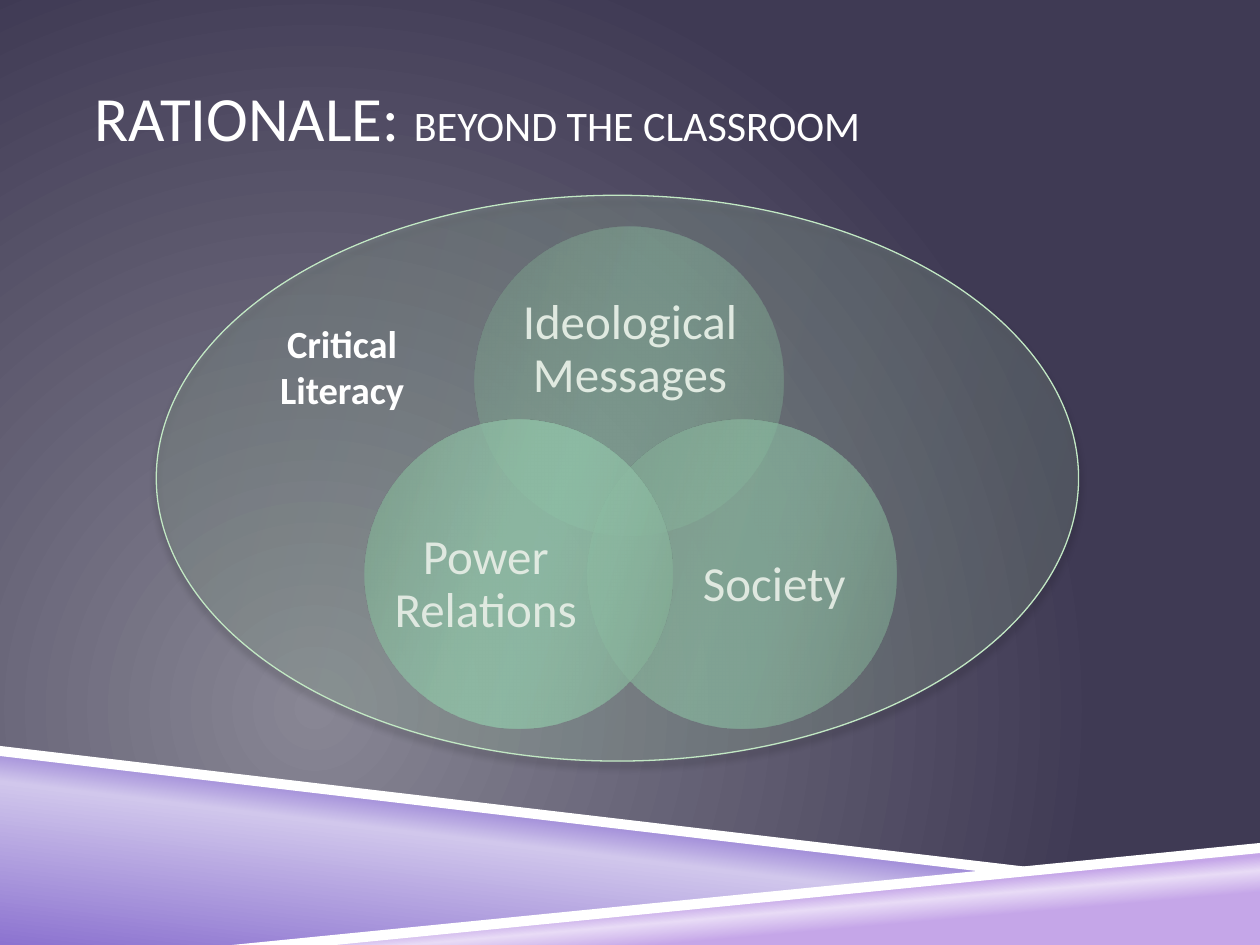
"""Build the rationale slide with its three overlapping circles."""
from lxml import etree
from pptx import Presentation
from pptx import util as u
from pptx.dml.color import RGBColor
from pptx.enum import shapes, text
from pptx.oxml.ns import qn

hue = RGBColor.from_string
OVAL = shapes.MSO_SHAPE.OVAL


def shade(owner, stops, alpha=100, angle=None):
    """Swap the owner's solid fill for a gradient; no angle means circular."""
    grad = etree.Element(qn("a:gradFill"), rotWithShape="1")
    marks = etree.SubElement(grad, qn("a:gsLst"))
    for pos, tone in stops:
        mark = etree.SubElement(marks, qn("a:gs"), pos=str(pos * 1000))
        color = etree.SubElement(mark, qn("a:srgbClr"), val=tone)
        if alpha < 100:
            etree.SubElement(color, qn("a:alpha"), val=str(alpha * 1000))
    if angle is None:
        way = etree.SubElement(grad, qn("a:path"), path="circle")
        etree.SubElement(way, qn("a:fillToRect"), l="50000", t="100000", r="100000", b="50000")
    else:
        etree.SubElement(grad, qn("a:lin"), ang=str(angle * 60000), scaled="0")
    owner.replace(owner.find(qn("a:solidFill")), grad)


def write(area, runs, align, inset, anchor, bold=False, gap=None):
    """Add a text box with one paragraph of (words, size) runs."""
    frame = slide.shapes.add_textbox(*map(u.Inches, area)).text_frame
    frame.word_wrap = True
    frame.vertical_anchor = anchor
    frame.margin_left = frame.margin_right = u.Inches(inset)
    frame.margin_top = frame.margin_bottom = u.Inches(0.05)
    para = frame.paragraphs[0]
    para.alignment = align
    para.line_spacing = gap
    for words, size in runs:
        run = para.add_run()
        run.text = words
        run.font.name = "Calibri"
        run.font.size = u.Pt(size)
        run.font.bold = bold
        run.font.color.rgb = hue("FFFFFF")


deck = Presentation()
deck.slide_width, deck.slide_height = u.Inches(10), u.Inches(7.5)
slide = deck.slides.add_slide(deck.slide_layouts[6])
slide.background.fill.solid()
shade(slide.element.xpath(".//p:bgPr")[0], [(0, "888694"), (100, "3F3A54")])

bands = [
    ([(0, 5.97), (7.92, 6.92), (2, 7.5), (0, 7.5)],
     [(0, "8C73D0"), (52, "D1C7EC"), (66, "8C73D0")], 277),
    ([(1.98, 7.5), (10, 6.72), (10, 7.5)],
     [(28, "C5A6E8"), (40, "E8DBF6"), (48, "C5A6E8")], 265),
    ([(0, 5.92), (0, 6), (7.9, 6.93), (8.32, 6.9)], None, None),
    ([(10, 6.69), (1.84, 7.5), (2.66, 7.5), (10, 6.77)], None, None),
]
for points, stops, angle in bands:
    spots = [(u.Inches(x), u.Inches(y)) for x, y in points]
    path = slide.shapes.build_freeform(*spots[0])
    path.add_line_segments(spots[1:])
    band = path.convert_to_shape()
    band.shadow.inherit = False
    band.line.fill.background()
    band.fill.solid()
    band.fill.fore_color.rgb = hue("FFFFFF")
    if stops:
        shade(band._element.spPr, stops, angle=angle)

write((0.75, 0.3, 8.5, 1.25), [("RATIONALE: ", 36), ("BEYOND THE CLASSROOM", 24)],
      text.PP_ALIGN.LEFT, 0, text.MSO_ANCHOR.MIDDLE)

steps = (0, 30, 45, 55, 73, 100)
ovals = [
    ((3.77, 1.8, 2.45, 2.45), ("6F9283", "7FAD99", "83B7A0"), 50,
     "Ideological Messages", (4.1, 2.23, 1.8, 1.1)),
    ((4.66, 3.33, 2.45, 2.45), ("749A8A", "86B6A1", "8AC1A9"), 65,
     "Society", (5.41, 3.97, 1.47, 1.35)),
    ((2.89, 3.33, 2.45, 2.45), ("7AA290", "8DBFA9", "91CAB1"), 80,
     "Power Relations", (3.12, 3.97, 1.47, 1.35)),
    ((1.24, 1.55, 7.32, 4.49), ("9FBEA0", "B7DFBA", "BFEBC1"), 21, None, None),
]
for area, tones, alpha, label, spot in ovals:
    oval = slide.shapes.add_shape(OVAL, *map(u.Inches, area))
    oval.shadow.inherit = False
    oval.line.fill.background()
    oval.fill.solid()
    shade(oval._element.spPr, list(zip(steps, tones + tones[::-1])), alpha, 16)
    if label:
        write(spot, [(label, 28)], text.PP_ALIGN.CENTER, 0, text.MSO_ANCHOR.MIDDLE, gap=0.9)

oval.line.color.rgb = hue("C2E8C4")
oval.line.width = u.Pt(0.75)
glow = etree.SubElement(oval._element.spPr.find(qn("a:effectLst")), qn("a:outerShdw"),
                        blurRad=str(u.Pt(4)), dist=str(u.Pt(3.3)), dir="5400000",
                        rotWithShape="0")
black = etree.SubElement(glow, qn("a:srgbClr"), val="000000")
etree.SubElement(black, qn("a:alpha"), val="40000")

write((2.02, 2.49, 1.39, 0.83), [("Critical Literacy", 22)],
      text.PP_ALIGN.CENTER, 0.1, text.MSO_ANCHOR.TOP, bold=True)

deck.save("out.pptx")
